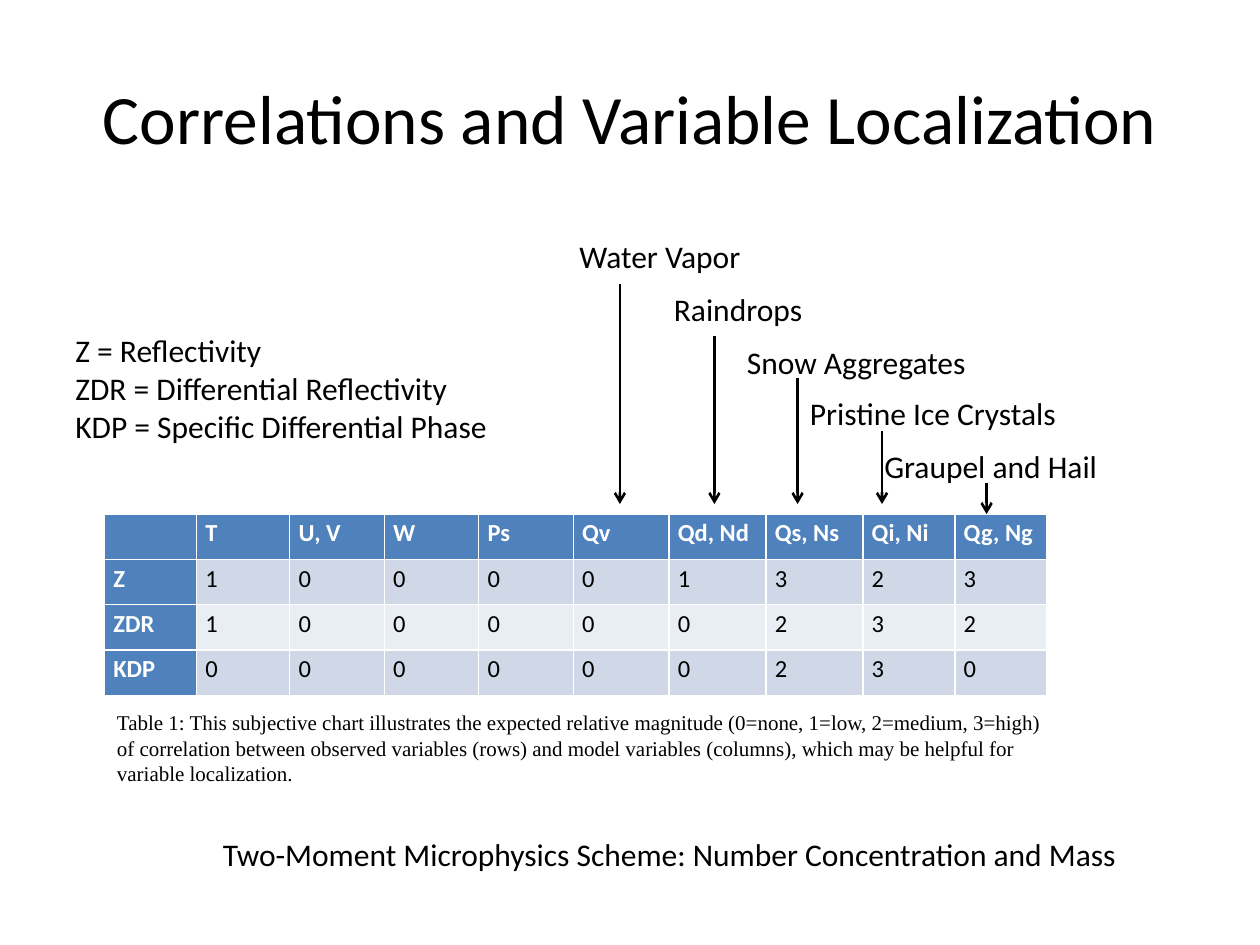
from lxml import etree
from pptx import Presentation
from pptx.dml.color import RGBColor
from pptx.enum.shapes import MSO_CONNECTOR
from pptx.enum.text import MSO_ANCHOR, MSO_AUTO_SIZE, PP_ALIGN
from pptx.oxml.ns import qn
from pptx.util import Inches, Pt

STRAIGHT = MSO_CONNECTOR.STRAIGHT
TOP, MIDDLE = MSO_ANCHOR.TOP, MSO_ANCHOR.MIDDLE
GROW = MSO_AUTO_SIZE.SHAPE_TO_FIT_TEXT
CENTER = PP_ALIGN.CENTER

BLACK = RGBColor(0x00, 0x00, 0x00)
WHITE = RGBColor(0xFF, 0xFF, 0xFF)
HEADER_BLUE = RGBColor(0x4F, 0x81, 0xBD)
BANDS = [RGBColor(0xD0, 0xD8, 0xE8), RGBColor(0xE9, 0xED, 0xF4)]

BODY_FONT = "Calibri"
CAPTION_FONT = "Times New Roman"

TABLE_ROWS = [
    ["", "T", "U, V", "W", "Ps", "Qv", "Qd, Nd", "Qs, Ns", "Qi, Ni", "Qg, Ng"],
    ["Z", "1", "0", "0", "0", "0", "1", "3", "2", "3"],
    ["ZDR", "1", "0", "0", "0", "0", "0", "2", "3", "2"],
    ["KDP", "0", "0", "0", "0", "0", "0", "2", "3", "0"],
]
COLUMN_WIDTHS = [0.73, 0.74, 0.75, 0.75, 0.75, 0.76, 0.77, 0.77, 0.73, 0.73]
TABLE_LEFT, TABLE_TOP, ROW_HEIGHT = 0.83, 4.08, 0.36

COLUMN_LABELS = [
    ("Water Vapor", 4.5, 1.83, 1.67),
    ("Raindrops", 5.25, 2.25, 2.17),
    ("Snow Aggregates", 5.83, 2.67, 2.5),
    ("Pristine Ice Crystals", 6.33, 3.08, 2.5),
    ("Graupel and Hail", 6.92, 3.5, 2.5),
]
ARROWS = [(4.92, 2.25, 4), (5.67, 2.67, 4), (6.33, 3, 4), (7, 3.42, 4), (7.83, 3.83, 4.08)]

LEGEND = (
    "Z = Reflectivity\n"
    "ZDR = Differential Reflectivity\n"
    "KDP = Specific Differential Phase"
)
CAPTION = (
    "Table 1: This subjective chart illustrates the expected relative magnitude "
    "(0=none, 1=low, 2=medium, 3=high) of correlation between observed variables (rows) "
    "and model variables (columns), which may be helpful for variable localization."
)
SCHEME_NOTE = "Two-Moment Microphysics Scheme: Number Concentration and Mass"


def format_runs(text_frame, size, name=BODY_FONT, color=BLACK, bold=False):
    """Apply one font to every run of a text frame."""
    for paragraph in text_frame.paragraphs:
        for run in paragraph.runs:
            run.font.size = Pt(size)
            run.font.name = name
            run.font.bold = bold
            run.font.color.rgb = color


def set_title(slide, text):
    """Fill and place the title placeholder."""
    title = slide.shapes.title
    title.left, title.top = Inches(0.5), Inches(0.3)
    title.width, title.height = Inches(9), Inches(1.25)
    title.text_frame.text = text
    title.text_frame.vertical_anchor = MIDDLE
    title.text_frame.paragraphs[0].alignment = CENTER
    format_runs(title.text_frame, 39.6)


def add_text(slide, text, left, top, width, height=0.4, size=18, name=BODY_FONT, anchor=TOP):
    """Add a wrapping text box."""
    shape = slide.shapes.add_textbox(Inches(left), Inches(top), Inches(width), Inches(height))
    text_frame = shape.text_frame
    text_frame.word_wrap = True
    text_frame.auto_size = GROW
    text_frame.vertical_anchor = anchor
    text_frame.text = text
    format_runs(text_frame, size, name)


def add_arrow(slide, x, top, bottom):
    """Add a vertical line with an open arrowhead at its lower end."""
    connector = slide.shapes.add_connector(
        STRAIGHT, Inches(x), Inches(top), Inches(x), Inches(bottom)
    )
    connector.line.color.rgb = BLACK
    connector.line.width = Pt(1.5)
    line = connector.line._get_or_add_ln()
    etree.SubElement(line, qn("a:tailEnd"), type="arrow")
    etree.SubElement(connector._element.spPr, qn("a:effectLst"))


def format_cell(cell, text, fill, color, bold):
    """Write and style one table cell."""
    cell.margin_left = cell.margin_right = Inches(0.07)
    cell.margin_top = cell.margin_bottom = 0
    cell.fill.solid()
    cell.fill.fore_color.rgb = fill
    cell.text_frame.text = text
    cell.text_frame.paragraphs[0].line_spacing = 1.15
    format_runs(cell.text_frame, 14, color=color, bold=bold)


def add_correlation_table(slide):
    """Add the table of observed against model variables."""
    table = slide.shapes.add_table(
        len(TABLE_ROWS), len(COLUMN_WIDTHS), Inches(TABLE_LEFT), Inches(TABLE_TOP),
        Inches(sum(COLUMN_WIDTHS)), Inches(ROW_HEIGHT * len(TABLE_ROWS)),
    ).table
    table.first_col = True
    for column, width in zip(table.columns, COLUMN_WIDTHS):
        column.width = Inches(width)
    for row_index, values in enumerate(TABLE_ROWS):
        table.rows[row_index].height = Inches(ROW_HEIGHT)
        for column_index, text in enumerate(values):
            is_header = row_index == 0 or column_index == 0
            fill = HEADER_BLUE if is_header else BANDS[(row_index - 1) % 2]
            color = WHITE if is_header else BLACK
            format_cell(table.cell(row_index, column_index), text, fill, color, is_header)


def main():
    """Build and save the slide."""
    presentation = Presentation()
    presentation.slide_width, presentation.slide_height = Inches(10), Inches(7.5)
    slide = presentation.slides.add_slide(presentation.slide_layouts[5])
    set_title(slide, "Correlations and Variable Localization")
    add_correlation_table(slide)
    add_text(slide, CAPTION, 0.83, 5.58, 7.58, 0.71, 12, CAPTION_FONT, MIDDLE)
    add_text(slide, LEGEND, 0.5, 2.58, 3.83, 1.01)
    for text, left, top, width in COLUMN_LABELS:
        add_text(slide, text, left, top, width)
    for x, top, bottom in ARROWS:
        add_arrow(slide, x, top, bottom)
    add_text(slide, SCHEME_NOTE, 1.67, 6.58, 8, 0.42)
    presentation.save("out.pptx")


if __name__ == "__main__":
    main()
